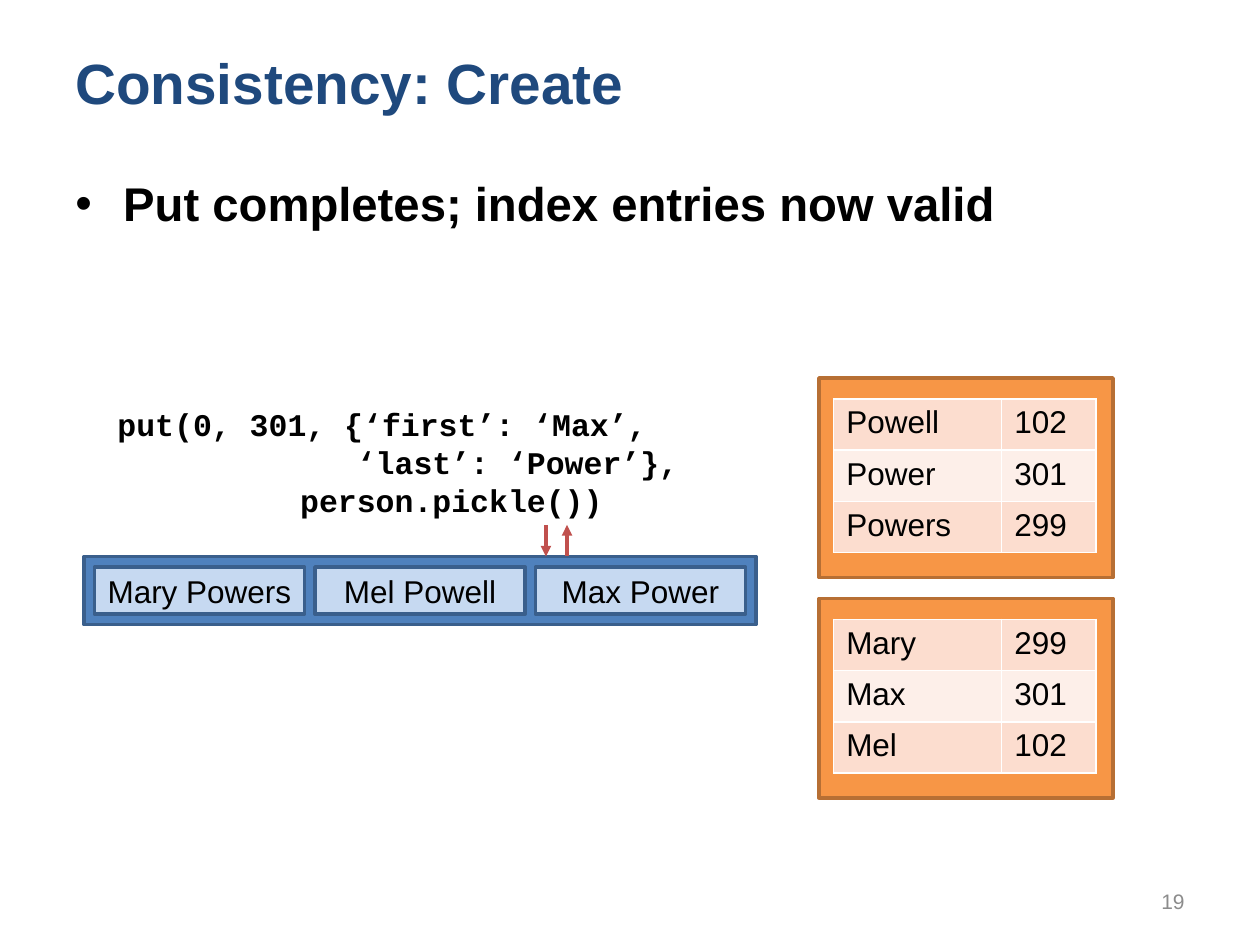
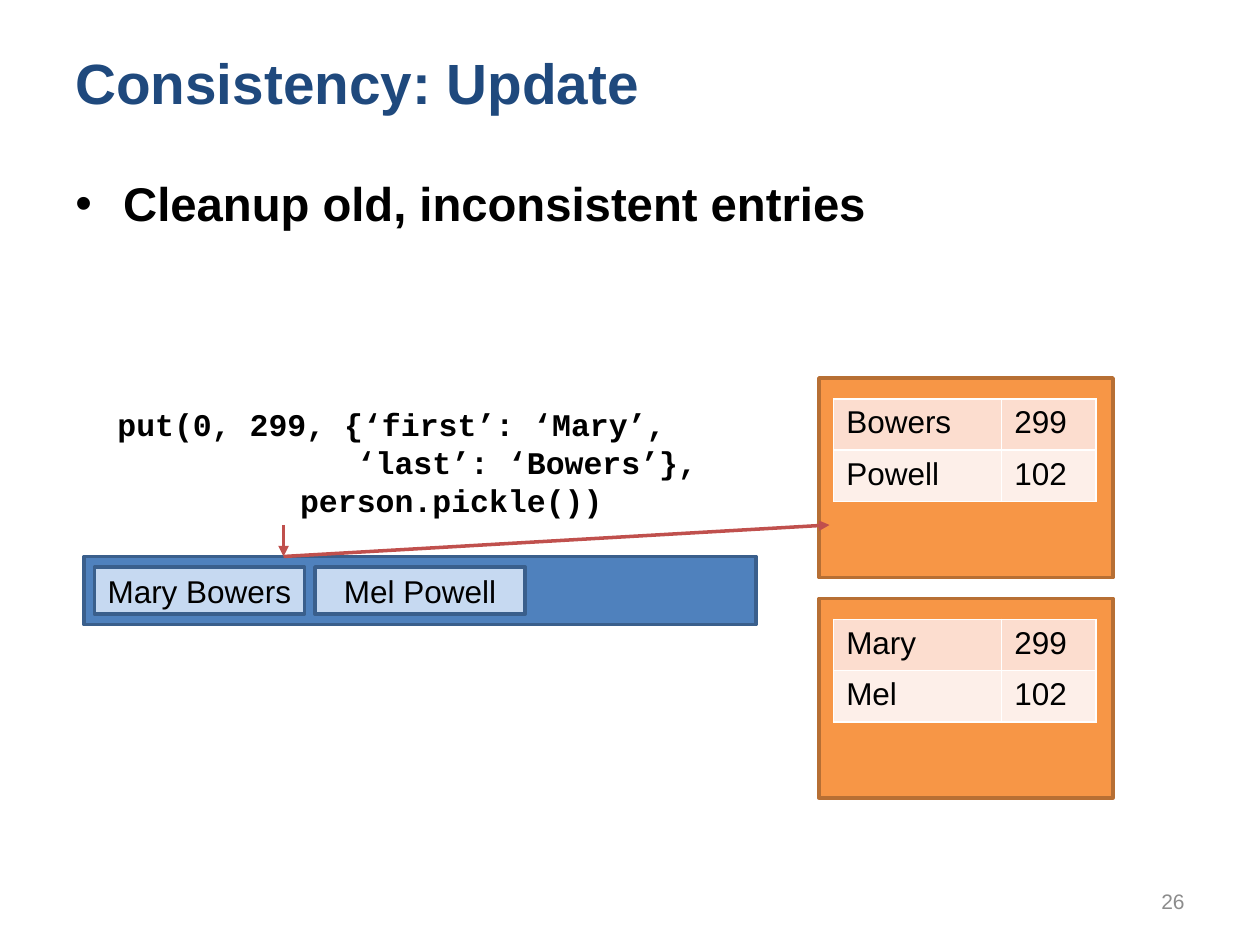
"""Builds two slides on index consistency: creating and updating an entity."""
from lxml import etree
from pptx import Presentation
from pptx import util as u
from pptx.dml.color import RGBColor
from pptx.enum import shapes, text
from pptx.oxml.ns import qn

NAVY = RGBColor(0x1F, 0x49, 0x7D)
BLACK = RGBColor(0, 0, 0)
GRAY = RGBColor(0x8C, 0x8C, 0x8C)
BLUE = RGBColor(0x4F, 0x81, 0xBD)
BLUE_EDGE = RGBColor(0x3A, 0x5F, 0x8C)
PALE_BLUE = RGBColor(0xC6, 0xD9, 0xF1)
ORANGE = RGBColor(0xF7, 0x96, 0x46)
ORANGE_EDGE = RGBColor(0xB7, 0x6F, 0x34)
RED = RGBColor(0xC0, 0x50, 0x4D)
BANDS = RGBColor(0xFC, 0xDD, 0xCF), RGBColor(0xFD, 0xEF, 0xE9)

TITLE = {"name": "Arial", "size": u.Pt(32.4), "bold": True}
BULLET = {"name": "Arial", "size": u.Pt(27), "bold": True}
CODE = {"name": "Courier New", "size": u.Pt(18), "bold": True}
LABEL = {"name": "Arial", "size": u.Pt(18), "bold": False}
NUMBER = {"name": "Arial", "size": u.Pt(12), "bold": False}
CODE_INDENTS = 0, 1.9, 1.45

prs = Presentation()
prs.slide_width, prs.slide_height = u.Inches(10), u.Inches(7.5)
CELL = prs.slide_width // 120
PANEL_STEP = ENTRY_STEP = 21


def write(tf, lines, font, color, anchor=text.MSO_ANCHOR.TOP, align=text.PP_ALIGN.LEFT):
    tf.word_wrap, tf.vertical_anchor = True, anchor
    for i, line in enumerate(lines):
        p = tf.add_paragraph() if i else tf.paragraphs[0]
        p.alignment = align
        r = p.add_run()
        r.text = line
        r.font.color.rgb = color
        for key, value in font.items():
            setattr(r.font, key, value)


def add_box(s, grid, fill=None, edge=None):
    at = [round(n * CELL) for n in grid]
    if fill is None:
        return s.shapes.add_textbox(*at)
    sp = s.shapes.add_shape(shapes.MSO_SHAPE.RECTANGLE, *at)
    sp.shadow.inherit = False
    sp.fill.solid()
    sp.fill.fore_color.rgb = fill
    sp.line.color.rgb, sp.line.width = edge, u.Pt(2)
    return sp


SLIDES = [
    {"title": "Consistency: Create", "bullet": "Put completes; index entries now valid",
     "code": ["put(0, 301, {‘first’: ‘Max’,", "‘last’: ‘Power’},", "person.pickle())"],
     "code_width": 100, "entries": ["Mary Powers", "Mel Powell", "Max Power"],
     "indexes": [[("Powell", "102"), ("Power", "301"), ("Powers", "299")],
                 [("Mary", "299"), ("Max", "301"), ("Mel", "102")]],
     "arrows": [(52, 50, 52, 53), (54, 53, 54, 50)], "number": "19"},
    {"title": "Consistency: Update", "bullet": "Cleanup old, inconsistent entries",
     "code": ["put(0, 299, {‘first’: ‘Mary’,", "‘last’: ‘Bowers’},", "person.pickle())"],
     "code_width": 61, "entries": ["Mary Bowers", "Mel Powell"],
     "indexes": [[("Bowers", "299"), ("Powell", "102")],
                 [("Mary", "299"), ("Mel", "102")]],
     "arrows": [(27, 50, 27, 53), (27, 53, 79, 50)], "number": "26"},
]

for data in SLIDES:
    s = prs.slides.add_slide(prs.slide_layouts[6])

    sp = add_box(s, (6, 3.6, 108, 8.4))
    write(sp.text_frame, [data["title"]], TITLE, NAVY, text.MSO_ANCHOR.MIDDLE)

    sp = add_box(s, (6, 16, 108, 64.4))
    write(sp.text_frame, [data["bullet"]], BULLET, BLACK)
    p = sp.text_frame.paragraphs[0]
    p.space_before = u.Pt(3.6)
    pPr = p._p.get_or_add_pPr()
    pPr.set("marL", str(u.Inches(0.38)))
    pPr.set("indent", str(-u.Inches(0.38)))
    etree.SubElement(pPr, qn("a:buFont")).set("typeface", "Arial")
    etree.SubElement(pPr, qn("a:buChar")).set("char", "•")

    for i, rows in enumerate(data["indexes"]):
        add_box(s, (78, 36 + i * PANEL_STEP, 28, 19), ORANGE, ORANGE_EDGE)
        at = [round(n * CELL) for n in (79.4, 38 + i * PANEL_STEP, 25, 4.88 * len(rows))]
        table = s.shapes.add_table(len(rows), 2, *at).table
        table.first_row = table.horz_banding = False
        for column, width in zip(table.columns, (16, 9)):
            column.width = width * CELL
        for j, row in enumerate(rows):
            for k, value in enumerate(row):
                cell = table.cell(j, k)
                tcPr = cell._tc.get_or_add_tcPr()
                for side in "LRTB":
                    ln = etree.SubElement(tcPr, qn("a:ln" + side), w=str(u.Pt(1)))
                    fill = etree.SubElement(ln, qn("a:solidFill"))
                    etree.SubElement(fill, qn("a:srgbClr"), val="FFFFFF")
                cell.fill.solid()
                cell.fill.fore_color.rgb = BANDS[j % 2]
                write(cell.text_frame, [value], LABEL, BLACK)

    sp = add_box(s, (10, 38, data["code_width"], 12))
    write(sp.text_frame, data["code"], CODE, BLACK)
    for p, indent in zip(sp.text_frame.paragraphs, CODE_INDENTS):
        p._p.get_or_add_pPr().set("marL", str(u.Inches(indent)))

    add_box(s, (8, 53, 64, 6.5), BLUE, BLUE_EDGE)
    for i, name in enumerate(data["entries"]):
        sp = add_box(s, (9 + i * ENTRY_STEP, 54, 20, 4.5), PALE_BLUE, BLUE_EDGE)
        tf = sp.text_frame
        tf.margin_left = tf.margin_right = 0
        write(tf, [name], LABEL, BLACK, text.MSO_ANCHOR.MIDDLE, text.PP_ALIGN.CENTER)

    for arrow in data["arrows"]:
        line = s.shapes.add_connector(shapes.MSO_CONNECTOR.STRAIGHT, *[n * CELL for n in arrow])
        line.line.color.rgb, line.line.width = RED, u.Pt(2)
        etree.SubElement(line.line._get_or_add_ln(), qn("a:tailEnd"), type="triangle")
        etree.SubElement(line._element.spPr, qn("a:effectLst"))

    sp = add_box(s, (86, 83.4, 28, 4.8))
    write(sp.text_frame, [data["number"]], NUMBER, GRAY, text.MSO_ANCHOR.MIDDLE, text.PP_ALIGN.RIGHT)

prs.save("out.pptx")
